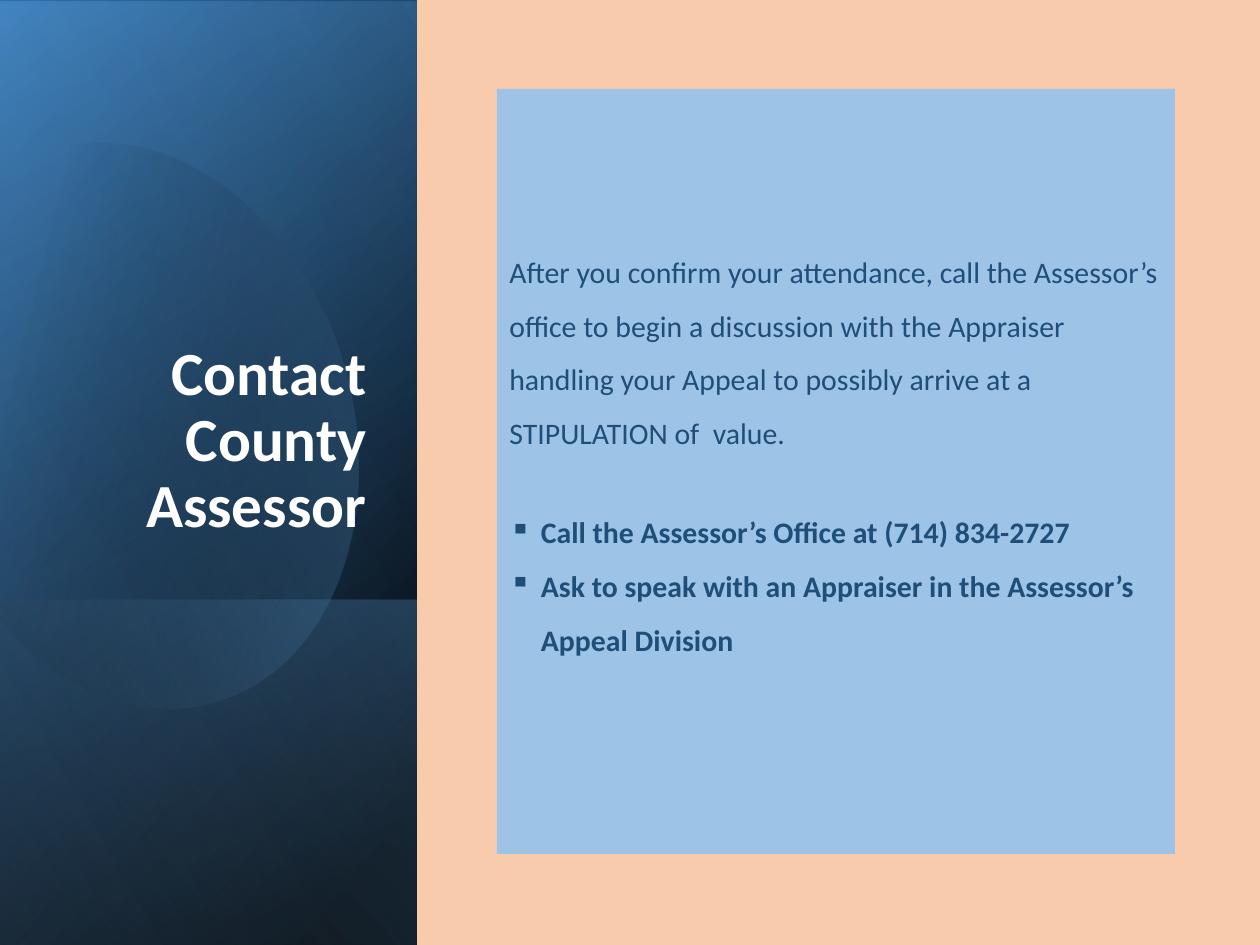
import math

import lxml.etree
import pptx
import pptx.dml.color
import pptx.enum.shapes
import pptx.enum.text
import pptx.oxml
import pptx.oxml.ns
import pptx.util

PX = 914400 / 126
COLORS = {
    "peach": "F8CBAD", "black": "000000", "deep": "2E75B6", "blue": "5B9BD5",
    "sky": "9DC3E6", "navy": "1F4E79", "white": "FFFFFF",
}
TITLE = {"name": "Calibri", "size": pptx.util.Pt(35), "bold": True}
BODY = {"name": "Calibri", "size": pptx.util.Pt(17), "bold": False}
BULLET = {**BODY, "bold": True}
PANEL_LAYERS = [
    ((0, 0, 417, 945), [(8, "black", 100), (100, "deep", 100)], 50),
    ((0, 2, 417, 945), [(0, "black", 0), (99, "blue", 46)], 30),
    ((0, 600, 417, 345), [(2, "blue", 29), (100, "black", 30)], 130),
]
PANEL_GLAZE = ((0, -1, 417, 945), [(0, "black", 0), (99, "sky", 11)], 120)
OVAL_START = (121, 144)
OVAL_CURVES = [
    [(215, 154), (307, 242), (344, 365)],
    [(387, 519), (330, 669), (215, 702)],
    [(144, 723), (67, 693), (9, 630)],
    [(-4, 615)], [(-32, 209)], [(-19, 194)],
    [(3, 173), (28, 158), (57, 149)],
    [(78, 142), (99, 141), (121, 144)],
]


def emu(*lengths):
    """Turn px lengths into EMU."""
    return [round(n * PX) for n in lengths]


def rgb(name):
    """Look up a named colour."""
    return pptx.dml.color.RGBColor.from_string(COLORS[name])


def apply(obj, values):
    """Set each attribute in values on obj."""
    for key, value in values.items():
        setattr(obj, key, value)


def add_rect(s, box, color=None):
    """Add a borderless rectangle."""
    sp = s.shapes.add_shape(pptx.enum.shapes.MSO_SHAPE.RECTANGLE, *emu(*box))
    sp.shadow.inherit = False
    sp.line.fill.background()
    if color:
        sp.fill.solid()
        sp.fill.fore_color.rgb = rgb(color)
    return sp


def set_gradient(sp, stops, angle):
    """Fill a shape with a linear gradient of (position, colour, alpha) stops."""
    sp.fill.background()
    gs = "".join(
        f'<a:gs pos="{pos * 1000}"><a:srgbClr val="{COLORS[color]}">'
        f'<a:alpha val="{alpha * 1000}"/></a:srgbClr></a:gs>'
        for pos, color, alpha in stops
    )
    grad = pptx.oxml.parse_xml(
        f'<a:gradFill {pptx.oxml.ns.nsdecls("a")} rotWithShape="1">'
        f'<a:gsLst>{gs}</a:gsLst><a:lin ang="{angle * 60000}" scaled="0"/></a:gradFill>'
    )
    spPr = sp.element.spPr
    spPr.replace(spPr.find(pptx.oxml.ns.qn("a:noFill")), grad)


def add_layer(s, box, stops, angle):
    """Add a turned and mirrored gradient rectangle that covers box."""
    x, y, w, h = box
    sp = add_rect(s, (x + (w - h) / 2, y + (h - w) / 2, h, w))
    sp.rotation = 90
    sp.element.spPr.find(pptx.oxml.ns.qn("a:xfrm")).set("flipH", "1")
    set_gradient(sp, stops, angle)


def trace(start, curves, steps=16):
    """Sample lines and cubic curves into points."""
    points = [start]
    for curve in curves:
        if len(curve) == 1:
            points.append(curve[0])
            continue
        knots = [points[-1], *curve]
        for i in range(1, steps + 1):
            t = i / steps
            weights = [math.comb(3, k) * t**k * (1 - t) ** (3 - k) for k in range(4)]
            points.append(tuple(
                sum(w * knot[axis] for w, knot in zip(weights, knots)) for axis in (0, 1)
            ))
    return points


def add_oval(s, x, y, tilt=16.1, center=(150, 421)):
    """Add the tilted, cut-off oval."""
    cx, cy = center
    cos, sin = math.cos(math.radians(tilt)), math.sin(math.radians(tilt))
    points = [
        emu(x + cx + (px - cx) * cos - (py - cy) * sin,
            y + cy + (px - cx) * sin + (py - cy) * cos)
        for px, py in trace(OVAL_START, OVAL_CURVES)
    ]
    builder = s.shapes.build_freeform(*points[0])
    builder.add_line_segments(points[1:], close=True)
    sp = builder.convert_to_shape()
    sp.shadow.inherit = False
    sp.line.fill.background()
    sp.rotation = 360 - tilt
    set_gradient(sp, [(29, "black", 0), (100, "blue", 43)], 30)


def add_text(p, text, font, color):
    """Add a formatted run to a paragraph."""
    r = p.add_run()
    r.text = text
    apply(r.font, font)
    r.font.color.rgb = rgb(color)


def add_panel(s, x, y):
    """Draw the dark side panel with its title."""
    for (dx, dy, w, h), stops, angle in PANEL_LAYERS:
        add_layer(s, (x + dx, y + dy, w, h), stops, angle)
    add_oval(s, x, y)
    (dx, dy, w, h), stops, angle = PANEL_GLAZE
    add_layer(s, (x + dx, y + dy, w, h), stops, angle)
    tf = s.shapes.add_textbox(*emu(x + 48, y + 81, 331, 466)).text_frame
    apply(tf, {"word_wrap": True, "vertical_anchor": pptx.enum.text.MSO_ANCHOR.BOTTOM})
    p = tf.paragraphs[0]
    apply(p, {"alignment": pptx.enum.text.PP_ALIGN.RIGHT, "line_spacing": 0.9})
    add_text(p, "Contact County Assessor", TITLE, "white")


def add_bullet(p):
    """Give a paragraph a square bullet and hanging indent."""
    pPr = p._p.get_or_add_pPr()
    pPr.set("marL", "228600")
    pPr.set("indent", "-228600")
    bullet = lxml.etree.SubElement(pPr, pptx.oxml.ns.qn("a:buChar"))
    bullet.set("char", "▪")


def add_body(s, box):
    """Draw the text card with its introduction and steps."""
    tf = add_rect(s, box, "sky").text_frame
    apply(tf, {
        "word_wrap": True,
        "vertical_anchor": pptx.enum.text.MSO_ANCHOR.MIDDLE,
        "margin_bottom": emu(56)[0],
    })
    rows = [
        ("After you confirm your attendance, call the Assessor’s office to begin a "
         "discussion with the Appraiser handling your Appeal to possibly arrive at a "
         "STIPULATION of  value.", BODY, 1.5, 0),
        ("Call the Assessor’s Office at (714) 834-2727", BULLET, 0.9, 38.7),
        ("Ask to speak with an Appraiser in the Assessor’s Appeal Division", BULLET, 1.5, 0),
    ]
    for i, (text, font, spacing, before) in enumerate(rows):
        p = tf.add_paragraph() if i else tf.paragraphs[0]
        apply(p, {
            "alignment": pptx.enum.text.PP_ALIGN.LEFT,
            "line_spacing": spacing,
            "space_before": pptx.util.Pt(before),
        })
        if font is BULLET:
            add_bullet(p)
        add_text(p, text, font, "navy")


def main():
    """Build and save the slide."""
    prs = pptx.Presentation()
    prs.slide_width, prs.slide_height = emu(1260, 945)
    s = prs.slides.add_slide(prs.slide_layouts[6])
    s.background.fill.solid()
    s.background.fill.fore_color.rgb = rgb("peach")
    add_rect(s, (0, 0, 1260, 945), "peach")
    add_panel(s, 0, 0)
    add_body(s, (497, 89, 678, 765))
    prs.save("out.pptx")


if __name__ == "__main__":
    main()
